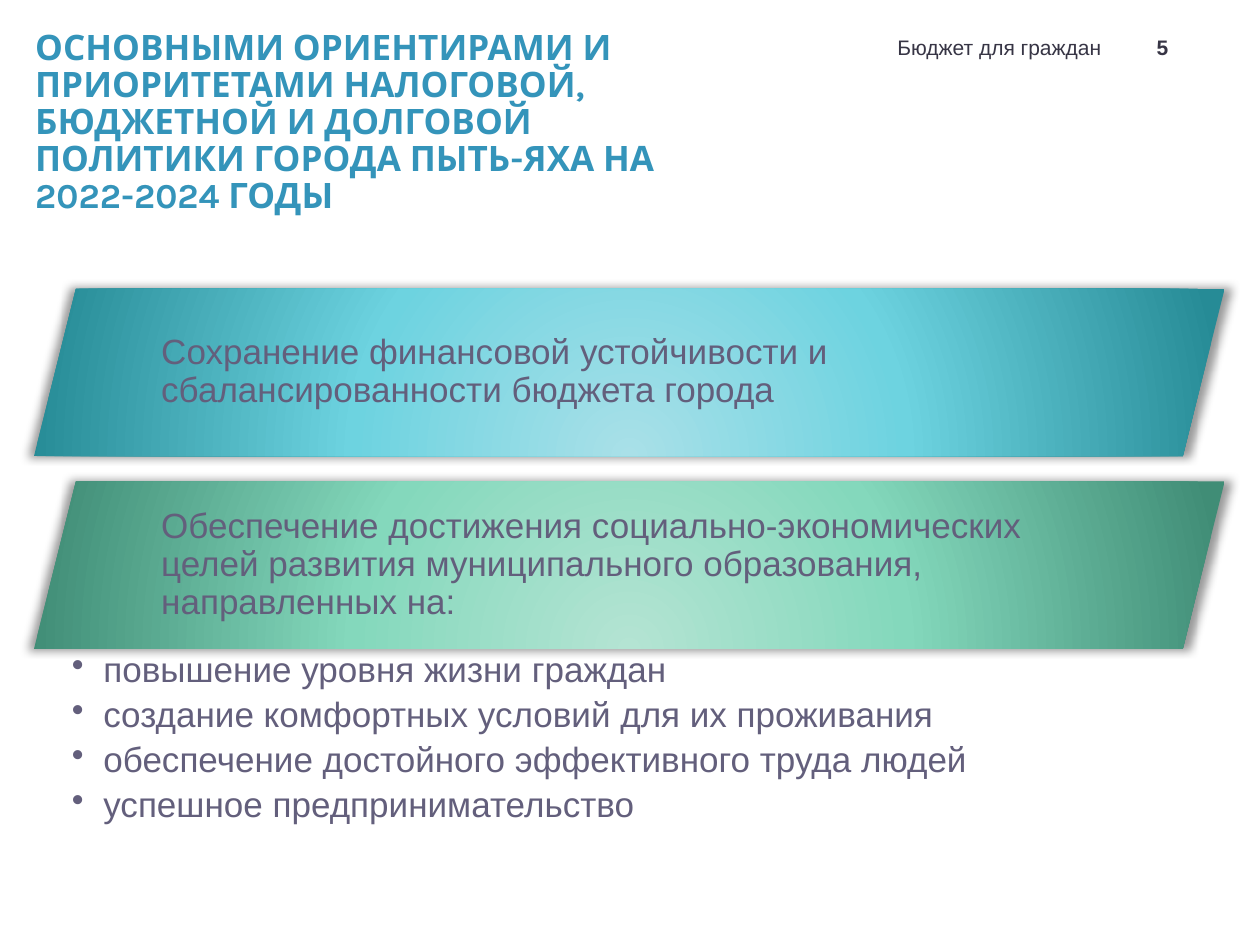
from dataclasses import dataclass

from lxml import etree
from pptx import Presentation
from pptx.dml.color import RGBColor
from pptx.enum.shapes import MSO_SHAPE
from pptx.enum.text import MSO_ANCHOR, PP_ALIGN
from pptx.oxml import parse_xml
from pptx.oxml.ns import nsdecls, qn
from pptx.util import Inches, Pt

PARALLELOGRAM = MSO_SHAPE.PARALLELOGRAM
TOP, MIDDLE, BOTTOM = MSO_ANCHOR.TOP, MSO_ANCHOR.MIDDLE, MSO_ANCHOR.BOTTOM
LEFT, CENTER, RIGHT = PP_ALIGN.LEFT, PP_ALIGN.CENTER, PP_ALIGN.RIGHT

PAGE_WIDTH, PAGE_HEIGHT = 10, 7.5
BAND_LEFT, BAND_TOP = 0.27, 2.29
BAND_WIDTH, BAND_HEIGHT, BAND_PITCH = 9.45, 1.33, 1.53
LABEL_LEFT, LABEL_WIDTH, LABEL_MARGIN = 1.2, 7.6, 0.13


@dataclass(frozen=True)
class Theme:
    title: str = "3494BA"
    header: str = "373545"
    body: str = "635F7C"
    title_font: str = "Karla"
    body_font: str = "Arial"
    large: int = 20
    small: int = 12


THEME = Theme()


@dataclass(frozen=True)
class TextStyle:
    color: str
    size: int = THEME.large
    font: str = THEME.body_font
    bold: bool = False
    align: PP_ALIGN = LEFT
    anchor: MSO_ANCHOR = TOP
    insets: tuple[float, float, float, float] = (0.1, 0.05, 0.1, 0.05)
    line_spacing: float = 1.0
    space_after: float = 0
    bullet_indent: float = 0


@dataclass(frozen=True)
class Band:
    text: str
    gradient: tuple[str, str, str]


TITLE = TextStyle(THEME.title, font=THEME.title_font, bold=True,
                  insets=(0, 0.05, 0, 0.05), line_spacing=0.88)
HEADER = TextStyle(THEME.header, THEME.small, align=RIGHT, anchor=BOTTOM)
PAGE_NUMBER = TextStyle(THEME.header, THEME.small, bold=True, align=CENTER, anchor=BOTTOM)
LABEL = TextStyle(THEME.body, anchor=MIDDLE, insets=(0.08,) * 4, line_spacing=0.9)
GOAL = TextStyle(THEME.body, insets=(0.3, 0.03, 0.16, 0.03), line_spacing=0.9,
                 space_after=4, bullet_indent=0.25)

BANDS = [
    Band("Сохранение финансовой устойчивости и сбалансированности бюджета города",
         ("A9E0E8", "6DD3E0", "268B96")),
    Band("Обеспечение достижения социально-экономических целей развития "
         "муниципального образования, направленных на:",
         ("B4E4D3", "84D8BC", "408D76")),
]
GOALS = [
    "повышение уровня жизни граждан",
    "создание комфортных условий для их проживания",
    "обеспечение достойного эффективного труда людей",
    "успешное предпринимательство",
]


def add_bullet(para, indent: float) -> None:
    properties = para._p.get_or_add_pPr()
    properties.set("marL", str(Inches(indent)))
    properties.set("indent", str(-Inches(indent)))
    etree.SubElement(properties, qn("a:buChar")).set("char", "•")


def add_text(page, left: float, top: float, width: float, height: float,
             lines: list[str], style: TextStyle) -> None:
    box = page.shapes.add_textbox(Inches(left), Inches(top), Inches(width), Inches(height))
    frame = box.text_frame
    frame.word_wrap = True
    frame.vertical_anchor = style.anchor
    (frame.margin_left, frame.margin_top,
     frame.margin_right, frame.margin_bottom) = map(Inches, style.insets)
    for index, line in enumerate(lines):
        para = frame.add_paragraph() if index else frame.paragraphs[0]
        para.text = line
        if style.bullet_indent:
            add_bullet(para, style.bullet_indent)
        para.alignment = style.align
        para.line_spacing = style.line_spacing
        para.space_after = Pt(style.space_after)
        para.font.name = style.font
        para.font.size = Pt(style.size)
        para.font.bold = style.bold
        para.font.color.rgb = RGBColor.from_string(style.color)


def add_glow_fill(shape, colors: tuple[str, str, str]) -> None:
    """Fill with a radial gradient centred below the shape, and add a soft shadow."""
    stops = "".join(
        f'<a:gs pos="{share * 1000}"><a:srgbClr val="{color}"/></a:gs>'
        for share, color in zip((0, 46, 100), colors))
    gradient = parse_xml(
        f'<a:gradFill {nsdecls("a")} rotWithShape="1"><a:gsLst>{stops}</a:gsLst>'
        '<a:path path="circle"><a:fillToRect l="110000" t="250000" r="110000" b="40000"/>'
        '</a:path></a:gradFill>')
    effects = parse_xml(
        f'<a:effectLst {nsdecls("a")}><a:outerShdw blurRad="{Pt(5)}" sx="101000" '
        'sy="101000" algn="ctr" rotWithShape="0"><a:srgbClr val="000000">'
        '<a:alpha val="40000"/></a:srgbClr></a:outerShdw></a:effectLst>')
    shape.line.fill.background()
    properties = shape._element.spPr
    properties.find(qn("a:prstGeom")).addnext(gradient)
    properties.append(effects)


def add_band(page, row: int, band: Band) -> None:
    top = BAND_TOP + row * BAND_PITCH
    shape = page.shapes.add_shape(PARALLELOGRAM, Inches(BAND_LEFT), Inches(top),
                                  Inches(BAND_WIDTH), Inches(BAND_HEIGHT))
    add_glow_fill(shape, band.gradient)
    add_text(page, LABEL_LEFT, top + LABEL_MARGIN, LABEL_WIDTH,
             BAND_HEIGHT - 2 * LABEL_MARGIN, [band.text], LABEL)


def main() -> None:
    deck = Presentation()
    deck.slide_width, deck.slide_height = Inches(PAGE_WIDTH), Inches(PAGE_HEIGHT)
    page = deck.slides.add_slide(deck.slide_layouts[6])
    add_text(page, 0.28, 0.2, 5.43, 0.74,
             ["ОСНОВНЫМИ ОРИЕНТИРАМИ И ПРИОРИТЕТАМИ НАЛОГОВОЙ, БЮДЖЕТНОЙ И ДОЛГОВОЙ "
              "ПОЛИТИКИ ГОРОДА ПЫТЬ-ЯХА НА 2022-2024 ГОДЫ"], TITLE)
    add_text(page, 6.42, 0.19, 2.42, 0.33, ["Бюджет для граждан"], HEADER)
    add_text(page, 8.95, 0.19, 0.55, 0.33, ["5"], PAGE_NUMBER)
    for row, band in enumerate(BANDS):
        add_band(page, row, band)
    goals_top = BAND_TOP + (len(BANDS) - 1) * BAND_PITCH + BAND_HEIGHT
    add_text(page, BAND_LEFT, goals_top, BAND_WIDTH, 1.4, GOALS, GOAL)
    deck.save("out.pptx")


if __name__ == "__main__":
    main()
